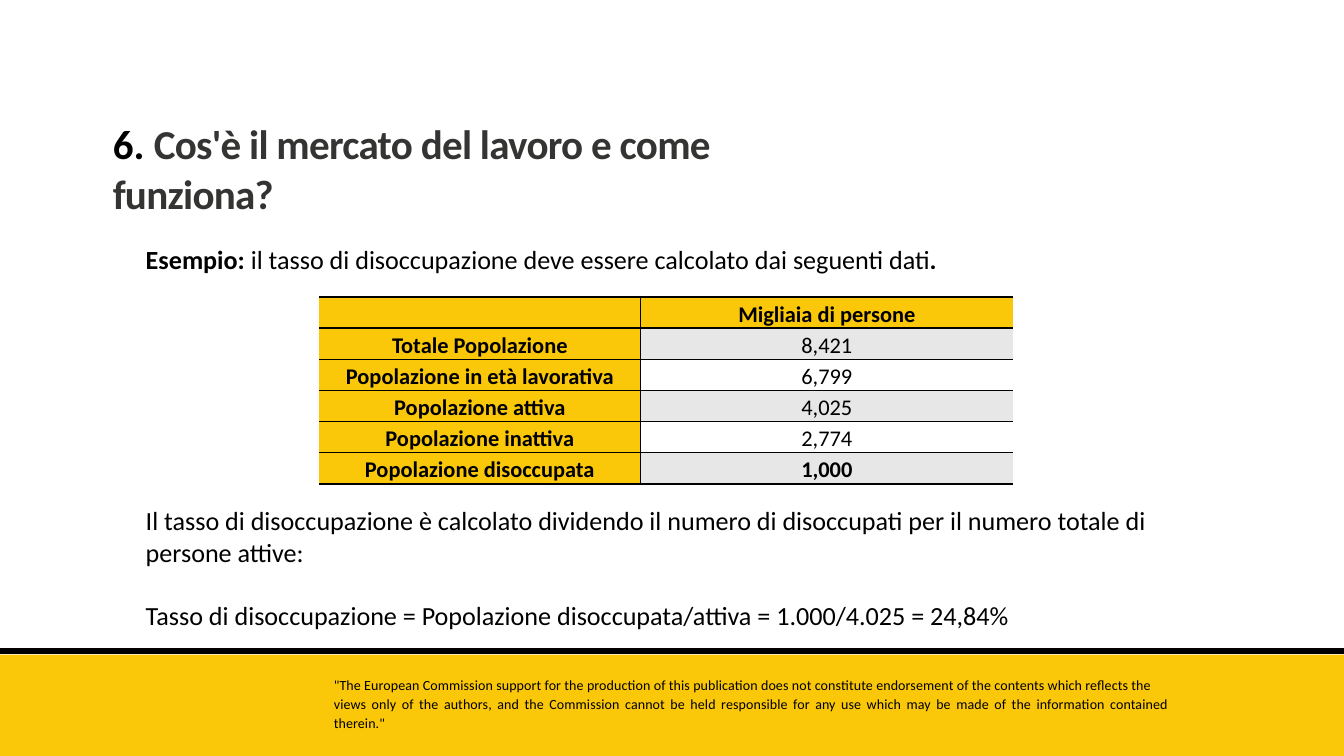
import pptx
import pptx.util
import pptx.dml.color
import pptx.enum.text
import pptx.enum.shapes
import pptx.oxml.ns
import lxml.etree

COLOURS = {"yellow": "FAC709", "black": "000000", "title": "343433",
           "grey": "E7E7E7", "white": "FFFFFF"}
ALIGN = pptx.enum.text.PP_ALIGN
Pt = pptx.util.Pt
qn = pptx.oxml.ns.qn


def colour(name):
    return pptx.dml.color.RGBColor.from_string(COLOURS[name])


def write(para, spans, size, **formats):
    """Fill a paragraph with (text, bold, colour name, letter spacing) spans."""
    for name, value in formats.items():
        setattr(para, name, value)
    for text, bold, ink, spacing in spans:
        span = para.add_run()
        span.text = text
        for name, value in {"name": "Calibri", "size": Pt(size), "bold": bold}.items():
            setattr(span.font, name, value)
        span.font.color.rgb = colour(ink)
        if spacing:
            span._r.get_or_add_rPr().set("spc", str(round(spacing * 100)))


deck = pptx.Presentation()
deck.slide_width = pptx.util.Inches(20)
deck.slide_height = pptx.util.Inches(11.25)
page = deck.slides.add_slide(deck.slide_layouts[6])
column, row = deck.slide_width / 100, deck.slide_height / 100  # one percent each

# Footer band with its black rule
band_top = 86.58
band = page.shapes.add_shape(pptx.enum.shapes.MSO_SHAPE.RECTANGLE, 0, int(band_top * row),
                             deck.slide_width, int((100 - band_top) * row))
band.shadow.inherit = False
band.fill.solid()
band.fill.fore_color.rgb = colour("yellow")
band.line.fill.background()

rule_y = int(86.13 * row)
rule = page.shapes.add_connector(pptx.enum.shapes.MSO_CONNECTOR.STRAIGHT,
                                 0, rule_y, deck.slide_width, rule_y)
rule.line.color.rgb = colour("black")
rule.line.width = Pt(6.75)
lxml.etree.SubElement(rule._element.spPr, qn("a:effectLst"))

# Text boxes: place in percent of the slide, text size, paragraphs of (spans, formats)
texts = [
    ((24.35, 89.24, 63.15, 7.82), 15, [
        ([('"The European Commission support for the production of this publication does not '
           "constitute endorsement of the contents which reflects the", False, "black", 0.1)],
         {"alignment": ALIGN.JUSTIFY, "line_spacing": Pt(16.1)}),
        ([("views only of the authors, and the Commission cannot be held responsible for any use "
           'which may be made of the information contained therein."', False, "black", 0.1)],
         {"alignment": ALIGN.JUSTIFY, "line_spacing": 1.13})]),
    ((7.9, 15.29, 55, 14.04), 44, [
        ([("6. ", True, "black", 0),
          ("Cos'è il mercato del lavoro e come funziona?", True, "title", -0.8)], {})]),
    ((10.35, 31.82, 77.55, 9.24), 28, [
        ([("Esempio: ", True, "black", 0),
          ("il tasso di disoccupazione deve essere calcolato dai seguenti dati",
           False, "black", 0),
          (".", True, "black", 0)], {})]),
    ((10.35, 66.31, 78.4, 21.87), 28, [
        ([("Il tasso di disoccupazione è calcolato dividendo il numero di disoccupati "
           "per il numero totale di persone attive:", False, "black", 0)], {}),
        ([("Tasso di disoccupazione = Popolazione disoccupata/attiva = 1.000/4.025 = 24,84%",
           False, "black", 0)], {"space_before": Pt(34)})]),
]
for (left, top, width, height), size, paras in texts:
    box = page.shapes.add_textbox(int(left * column), int(top * row),
                                  int(width * column), int(height * row))
    frame = box.text_frame
    frame.word_wrap = True
    for number, (spans, formats) in enumerate(paras):
        para = frame.add_paragraph() if number else frame.paragraphs[0]
        write(para, spans, size, **formats)

# Population table
figures = [("", "Migliaia di persone"), ("Totale Popolazione", "8,421"),
           ("Popolazione in età lavorativa", "6,799"), ("Popolazione attiva", "4,025"),
           ("Popolazione inattiva", "2,774"), ("Popolazione disoccupata", "1,000")]
last = len(figures) - 1
widths, row_height = (23.9, 27.75), 4.12
table = page.shapes.add_table(len(figures), 2, int(23.75 * column), int(39.29 * row),
                              int(sum(widths) * column),
                              int(row_height * len(figures) * row)).table
for c, width in enumerate(widths):
    table.columns[c].width = int(width * column)
cell_format = {"margin_left": Pt(3.6), "margin_right": Pt(3.6), "margin_top": 0,
               "margin_bottom": 0, "vertical_anchor": pptx.enum.text.MSO_ANCHOR.BOTTOM}
for r, texts_in_row in enumerate(figures):
    for c, text in enumerate(texts_in_row):
        cell = table.cell(r, c)
        for name, value in cell_format.items():
            setattr(cell, name, value)
        borders = {"lnL": c, "lnR": 1 - c, "lnT": 1 if r else 2, "lnB": 2 if r in (0, last) else 1}
        for side, points in borders.items():
            line = lxml.etree.SubElement(cell._tc.get_or_add_tcPr(), qn("a:" + side),
                                         w=str(Pt(points)))
            if points:
                fill = lxml.etree.SubElement(line, qn("a:solidFill"))
                lxml.etree.SubElement(fill, qn("a:srgbClr"), val=COLOURS["black"])
            else:
                lxml.etree.SubElement(line, qn("a:noFill"))
        heading = r == 0 or c == 0
        cell.fill.solid()
        cell.fill.fore_color.rgb = colour("yellow" if heading else "grey" if r % 2 else "white")
        if text:
            write(cell.text_frame.paragraphs[0], [(text, heading or r == last, "black", 0)], 24,
                  alignment=ALIGN.CENTER)

deck.save("out.pptx")
